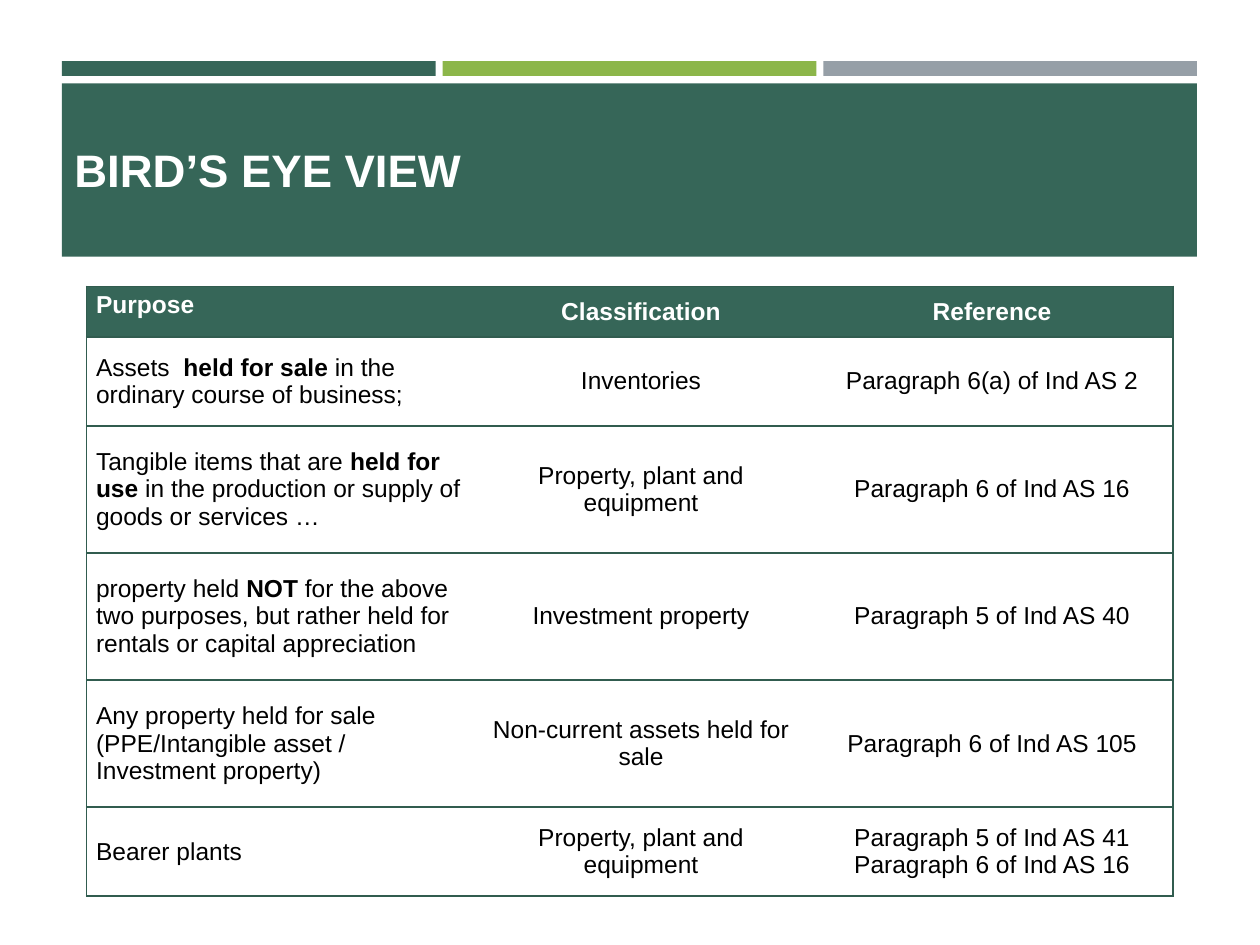
from typing import NamedTuple

from lxml import etree
from pptx import Presentation
from pptx.dml.color import RGBColor
from pptx.enum.shapes import MSO_SHAPE
from pptx.enum.text import MSO_ANCHOR, PP_ALIGN
from pptx.oxml.ns import qn
from pptx.util import Pt

RECT = MSO_SHAPE.RECTANGLE
TOP, MID = MSO_ANCHOR.TOP, MSO_ANCHOR.MIDDLE
LEFT, MIDDLE = PP_ALIGN.LEFT, PP_ALIGN.CENTER

COLORS = {
    "green": "366658",
    "lime": "8CB64A",
    "gray": "969FA7",
    "line": "315C4F",
    "white": "FFFFFF",
    "black": "000000",
}
FONT = "Arial"
PAD = {
    "margin_left": Pt(5.4),
    "margin_right": Pt(5.4),
    "margin_top": Pt(2.7),
    "margin_bottom": Pt(2.7),
}


class Box(NamedTuple):
    left: float
    top: float
    width: float
    height: float

    def points(self) -> list:
        return [Pt(side) for side in self]


class Row(NamedTuple):
    height: float
    purpose: str  # asterisks enclose bold words
    group: str
    source: str


BAND = Box(35.4, 47.6, 648.6, 99)
BARS = ["green", "lime", "gray"]
BAR_TOP, BAR_HIGH, BAR_GAP = 35, 8.4, 4
GRID = Box(49.5, 163.7, 620.8, 348.5)
COLS = [219.6, 194.5, 206.7]
ROWS = [
    Row(28.8, "*Purpose*", "*Classification*", "*Reference*"),
    Row(50.9, "Assets  *held for sale *in the ordinary course of business;",
        "Inventories", "Paragraph 6(a) of Ind AS 2"),
    Row(72.6, "Tangible items that are *held for use* in the production "
        "or supply of goods or services …",
        "Property, plant and equipment", "Paragraph 6 of Ind AS 16"),
    Row(72.6, "property held *NOT* for the above two purposes, but rather "
        "held for rentals or capital appreciation",
        "Investment property", "Paragraph 5 of Ind AS 40"),
    Row(72.6, "Any property held for sale "
        "(PPE/Intangible asset / Investment property)",
        "Non-current assets held for sale", "Paragraph 6 of Ind AS 105"),
    Row(50.9, "Bearer plants", "Property, plant and equipment",
        "Paragraph 5 of Ind AS 41\nParagraph 6 of Ind AS 16"),
]


def shade(name: str) -> RGBColor:
    return RGBColor.from_string(COLORS[name])


def apply(item, values: dict) -> None:
    for name, value in values.items():
        setattr(item, name, value)


def draw_bar(slide, box: Box, color: str) -> None:
    bar = slide.shapes.add_shape(RECT, *box.points())
    bar.shadow.inherit = False
    bar.fill.solid()
    bar.fill.fore_color.rgb = shade(color)
    bar.line.fill.background()


def write(frame, text: str, size: float, color: str, align) -> None:
    """Fill a frame, one paragraph a line, with *bold* marks."""
    for i, line in enumerate(text.split("\n")):
        para = frame.add_paragraph() if i else frame.paragraphs[0]
        para.alignment = align
        for j, part in enumerate(line.split("*")):
            if part:
                run = para.add_run()
                run.text = part
                apply(run.font, {"name": FONT, "size": Pt(size), "bold": j % 2 == 1})
                run.font.color.rgb = shade(color)


def edge(cell, sides: str) -> None:
    """Rule the named sides of a cell and clear the others."""
    props = cell._tc.get_or_add_tcPr()
    for side in "LRTB":
        line = etree.SubElement(props, qn(f"a:ln{side}"), w=str(Pt(1)))
        if side in sides:
            fill = etree.SubElement(line, qn("a:solidFill"))
            etree.SubElement(fill, qn("a:srgbClr"), val=COLORS["line"])
        else:
            etree.SubElement(line, qn("a:noFill"))


def draw_table(slide) -> None:
    frame = slide.shapes.add_table(len(ROWS), len(COLS), *GRID.points())
    table = frame.table
    for col, width in zip(table.columns, COLS):
        col.width = Pt(width)
    for r, row in enumerate(ROWS):
        table.rows[r].height = Pt(row.height)
        for c, text in enumerate(row[1:]):
            cell = table.cell(r, c)
            anchor = TOP if r == c == 0 else MID
            apply(cell, {**PAD, "vertical_anchor": anchor})
            edge(cell, "TB" + ("L", "", "R")[c])
            if r == 0:
                cell.fill.solid()
                cell.fill.fore_color.rgb = shade("green")
            else:
                cell.fill.background()
            write(cell.text_frame, text, 14, "black" if r else "white",
                  MIDDLE if c else LEFT)


def main() -> None:
    deck = Presentation()
    apply(deck, {"slide_width": Pt(720), "slide_height": Pt(540)})
    slide = deck.slides.add_slide(deck.slide_layouts[6])

    # Three thin bars over the title band
    wide = (BAND.width - 2 * BAR_GAP) / len(BARS)
    for i, color in enumerate(BARS):
        left = BAND.left + i * (wide + BAR_GAP)
        draw_bar(slide, Box(left, BAR_TOP, wide, BAR_HIGH), color)
    draw_bar(slide, BAND, "green")

    # Title
    title = slide.shapes.add_textbox(*Box(35.4, 54, 561, 85).points())
    apply(title.text_frame, {"word_wrap": True, "vertical_anchor": MID})
    write(title.text_frame, "*BIRD’S EYE VIEW*", 26, "white", LEFT)

    draw_table(slide)
    deck.save("out.pptx")


if __name__ == "__main__":
    main()
